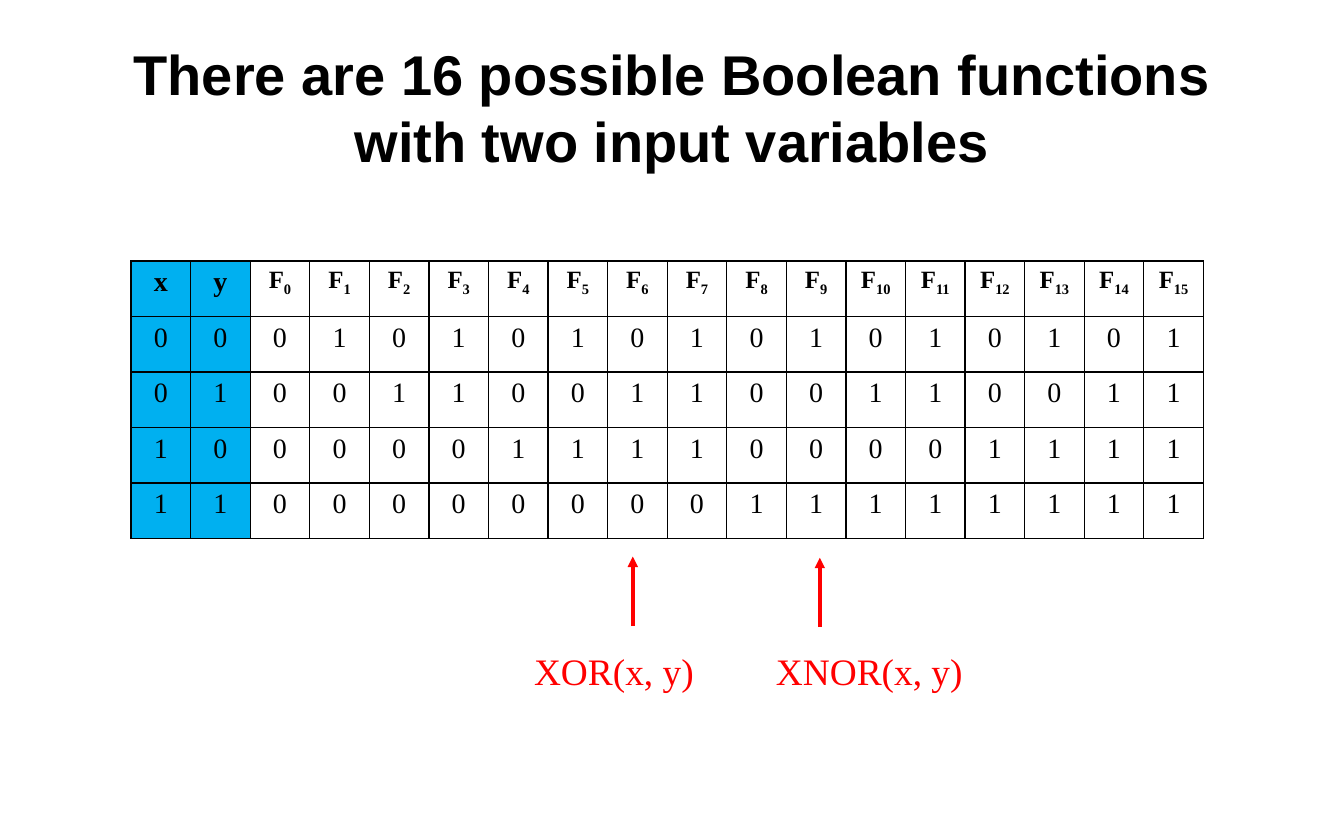
"""Build a slide listing the 16 Boolean functions of two input variables."""
import lxml.etree
import pptx
import pptx.dml.color
import pptx.enum.shapes
import pptx.enum.text
import pptx.oxml.ns
import pptx.util

Inches = pptx.util.Inches
qn = pptx.oxml.ns.qn
CENTER = pptx.enum.text.PP_ALIGN.CENTER


def color(value):
    return pptx.dml.color.RGBColor.from_string(value)


def add_span(para, text, size, font="Times New Roman", fill="000000", bold=False):
    span = para.add_run()
    span.text = text
    span.font.size = pptx.util.Pt(size)
    span.font.name = font
    span.font.bold = bold
    span.font.color.rgb = color(fill)
    return span


deck = pptx.Presentation()
deck.slide_width = Inches(12)
deck.slide_height = Inches(7.5)
page = deck.slides.add_slide(deck.slide_layouts[6])

title = page.shapes.add_textbox(Inches(1), Inches(0.33), Inches(10), Inches(1.25))
title.text_frame.word_wrap = True
title.text_frame.vertical_anchor = pptx.enum.text.MSO_ANCHOR.MIDDLE
para = title.text_frame.paragraphs[0]
para.alignment = CENTER
add_span(para, "There are 16 possible Boolean functions", 36, "Arial", bold=True)
para.add_line_break()
add_span(para, "with two input variables", 36, "Arial", bold=True)

header = ["x", "y"] + ["F"] * 16
truth_rows = [
    [row >> 1, row & 1] + [number >> row & 1 for number in range(16)]
    for row in range(4)
]

frame = page.shapes.add_table(
    5, 18, Inches(1.17), Inches(2.33), Inches(9.58), Inches(2.48)
)
table = frame.table
table.first_row = False
table.horz_banding = False
for row, values in enumerate([header] + truth_rows):
    for column, value in enumerate(values):
        cell = table.cell(row, column)
        para = cell.text_frame.paragraphs[0]
        para.alignment = CENTER
        is_function = row == 0 and column >= 2
        add_span(para, str(value), 16 if is_function else 18, bold=row == 0)
        if is_function:
            index = add_span(para, str(column - 2), 16, bold=True)
            index.font._element.set("baseline", "-25000")

        properties = cell._tc.get_or_add_tcPr()
        for side in ("a:lnL", "a:lnR", "a:lnT", "a:lnB"):
            border = lxml.etree.SubElement(properties, qn(side), w="12700")
            solid = lxml.etree.SubElement(border, qn("a:solidFill"))
            lxml.etree.SubElement(solid, qn("a:srgbClr"), val="000000")
        if column < 2:
            cell.fill.solid()
            cell.fill.fore_color.rgb = color("00B0F0")
        else:
            cell.fill.background()

for name, arrow_x, arrow_top, label_left, label_width in (
    ("XOR(x, y)", 5.65, 4.97, 4.67, 1.64),
    ("XNOR(x, y)", 7.32, 4.98, 6.83, 1.89),
):
    arrow = page.shapes.add_connector(
        pptx.enum.shapes.MSO_CONNECTOR.STRAIGHT,
        Inches(arrow_x), Inches(arrow_top + 0.62), Inches(arrow_x), Inches(arrow_top),
    )
    arrow.line.color.rgb = color("FF0000")
    arrow.line.width = pptx.util.Pt(2.25)
    lxml.etree.SubElement(arrow.line._get_or_add_ln(), qn("a:tailEnd"), type="triangle")
    lxml.etree.SubElement(arrow._element.spPr, qn("a:effectLst"))

    label = page.shapes.add_textbox(
        Inches(label_left), Inches(5.74), Inches(label_width), Inches(0.51)
    )
    label.text_frame.word_wrap = False
    label.text_frame.auto_size = pptx.enum.text.MSO_AUTO_SIZE.SHAPE_TO_FIT_TEXT
    add_span(label.text_frame.paragraphs[0], name, 24, fill="FF0000")

deck.save("out.pptx")
